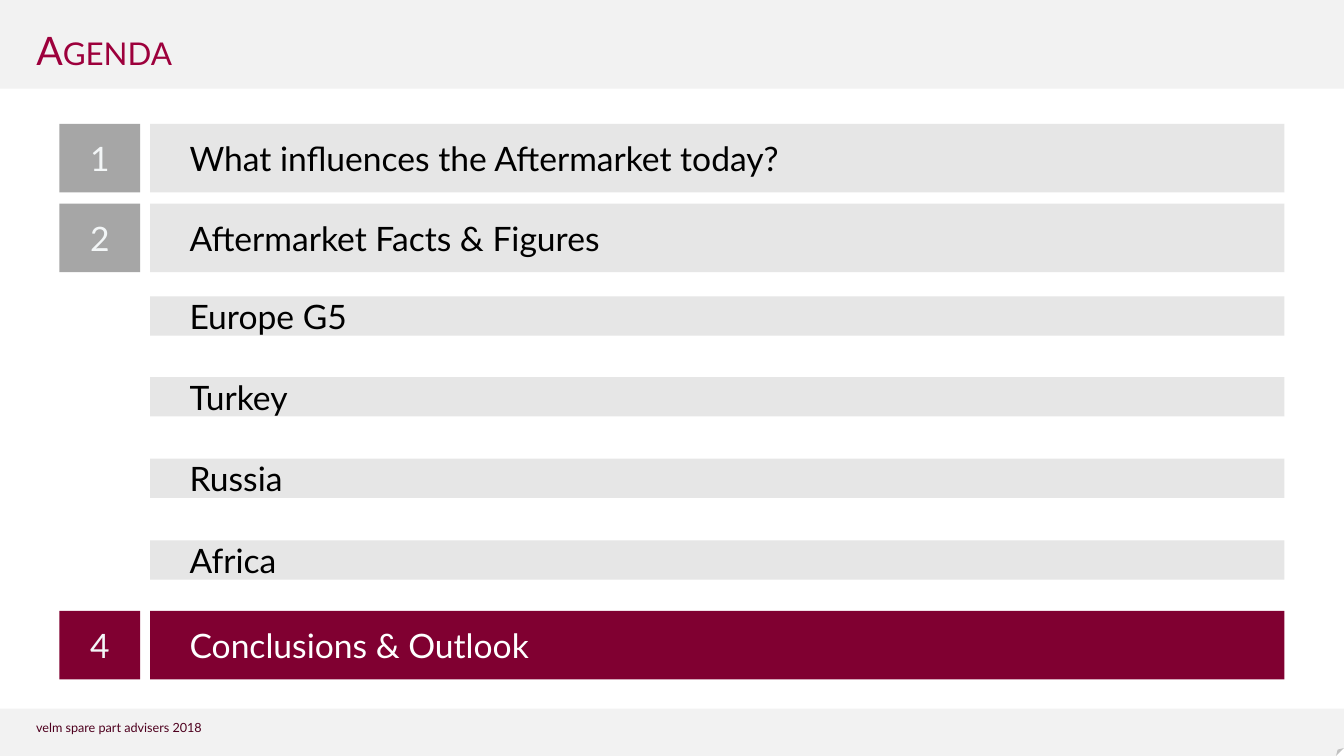
from pptx import Presentation
from pptx import util as u
from pptx.dml.color import RGBColor
from pptx.enum import shapes, text
from pptx.oxml.ns import qn

PX = 9144
FONT = "Lato"
PALE = RGBColor(0xF2, 0xF2, 0xF2)
LIGHT = RGBColor(0xE6, 0xE6, 0xE6)
GREY = RGBColor(0xA6, 0xA6, 0xA6)
WINE = RGBColor(0x80, 0x00, 0x31)
ROSE = RGBColor(0x9D, 0x00, 0x3C)
DARK = RGBColor(0x4E, 0x00, 0x1E)
MIST = RGBColor(0xF3, 0xF6, 0xF7)
BLACK = RGBColor(0, 0, 0)
WHITE = RGBColor(255, 255, 255)
RECT = shapes.MSO_SHAPE.RECTANGLE
LEFT = text.PP_ALIGN.LEFT
MIDDLE = text.MSO_ANCHOR.MIDDLE


def px(*vals):
    return [u.Emu(v * PX) for v in vals]


def panel(slide, box, fill, kind=RECT):
    shape = slide.shapes.add_shape(kind, *px(*box))
    shape.shadow.inherit = False
    shape.fill.solid()
    shape.fill.fore_color.rgb = fill
    shape.line.fill.background()
    return shape


def write(shape, words, size, color, align=LEFT, anchor=MIDDLE,
          pad=(10, 5, 10, 5), wrap=True):
    frame = shape.text_frame
    frame.text = words
    frame.auto_size = text.MSO_AUTO_SIZE.NONE
    frame.word_wrap = wrap
    frame.vertical_anchor = anchor
    (frame.margin_left, frame.margin_top,
     frame.margin_right, frame.margin_bottom) = px(*pad)
    para = frame.paragraphs[0]
    para.alignment = align
    para.font.name = FONT
    para.font.size = u.Pt(size)
    para.font.color.rgb = color
    return para


def header(slide, box, words):
    x, y, w, h = box
    panel(slide, box, PALE)
    title = slide.shapes.title
    title.left, title.top, title.width, title.height = px(x + 26, y + 9, 1200, h - 19)
    para = write(title, words, 28, ROSE, anchor=text.MSO_ANCHOR.BOTTOM)
    para._p.pPr.find(qn("a:defRPr")).set("cap", "small")
    slide.shapes._spTree.append(title._element)


def footer(slide, box, words):
    x, y, w, h = box
    panel(slide, box, PALE, shapes.MSO_SHAPE.FOLDED_CORNER)
    note = slide.shapes.add_textbox(*px(x + 26, y + 6, 490, 25))
    write(note, words, 9, DARK, anchor=text.MSO_ANCHOR.TOP)


def bar(slide, box, words, fill=LIGHT, color=BLACK):
    write(panel(slide, box, fill), words, 24, color, pad=(39, 14, 31, 14), wrap=False)


def topic(slide, box, num, words, active=False):
    x, y, w, h = box
    badge = panel(slide, (x, y, 80, h), WINE if active else GREY)
    write(badge, num, 24, MIST, align=text.PP_ALIGN.CENTER)
    look = (WINE, WHITE) if active else (LIGHT, BLACK)
    bar(slide, (x + 90, y, w - 90, h), words, *look)


def agenda(slide, box):
    x, y, w, h = box
    tall = 68
    topic(slide, (x, y, w, tall), "1", "What influences the Aftermarket today?")
    topic(slide, (x, y + 79, w, tall), "2", "Aftermarket Facts & Figures")
    for i, region in enumerate(["Europe G5", "Turkey", "Russia", "Africa"]):
        bar(slide, (x + 90, y + 171 + 242 * i // 3, w - 90, 39), region)
    topic(slide, (x, y + h - tall, w, tall), "4", "Conclusions & Outlook", True)


def main():
    deck = Presentation()
    deck.slide_width, deck.slide_height = px(1333, 750)
    slide = deck.slides.add_slide(deck.slide_layouts[5])
    header(slide, (0, 0, 1333, 88), "Agenda")
    footer(slide, (0, 703, 1333, 47), "velm spare part advisers 2018")
    agenda(slide, (59, 123, 1215, 551))
    deck.save("out.pptx")


if __name__ == "__main__":
    main()
